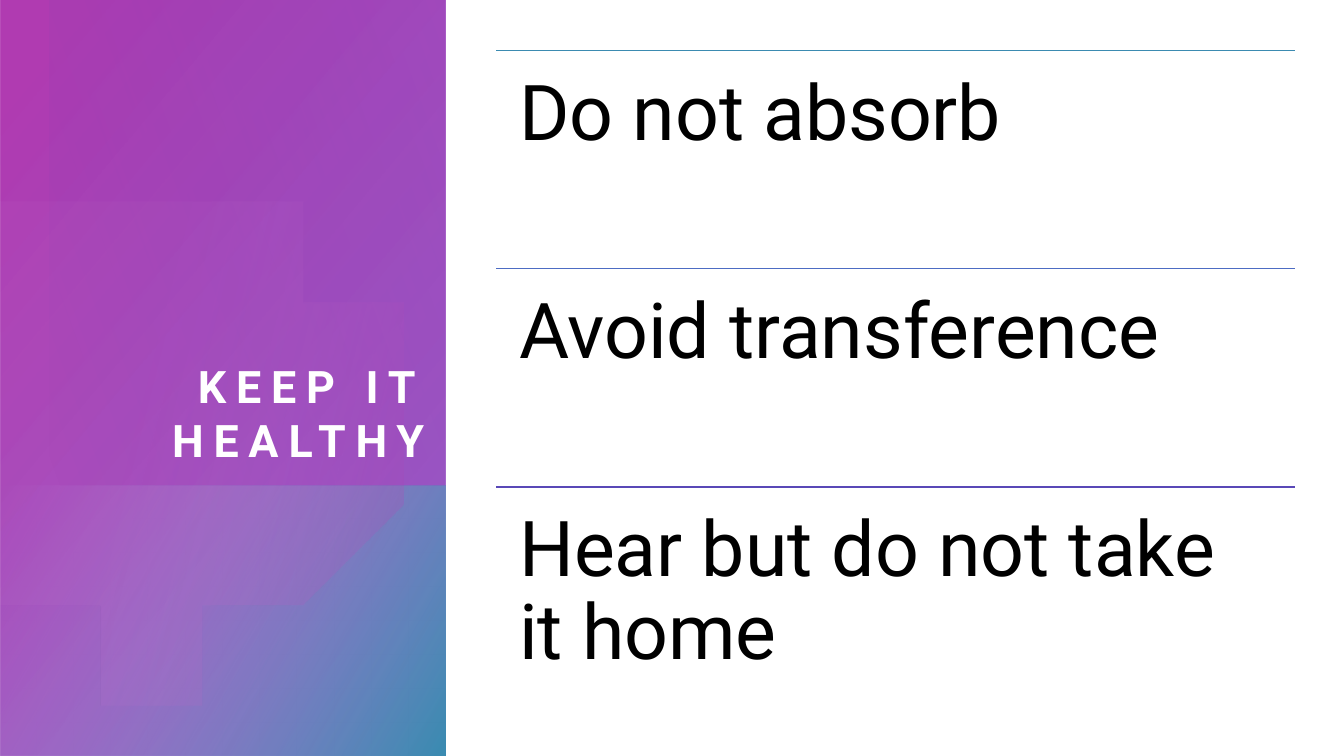
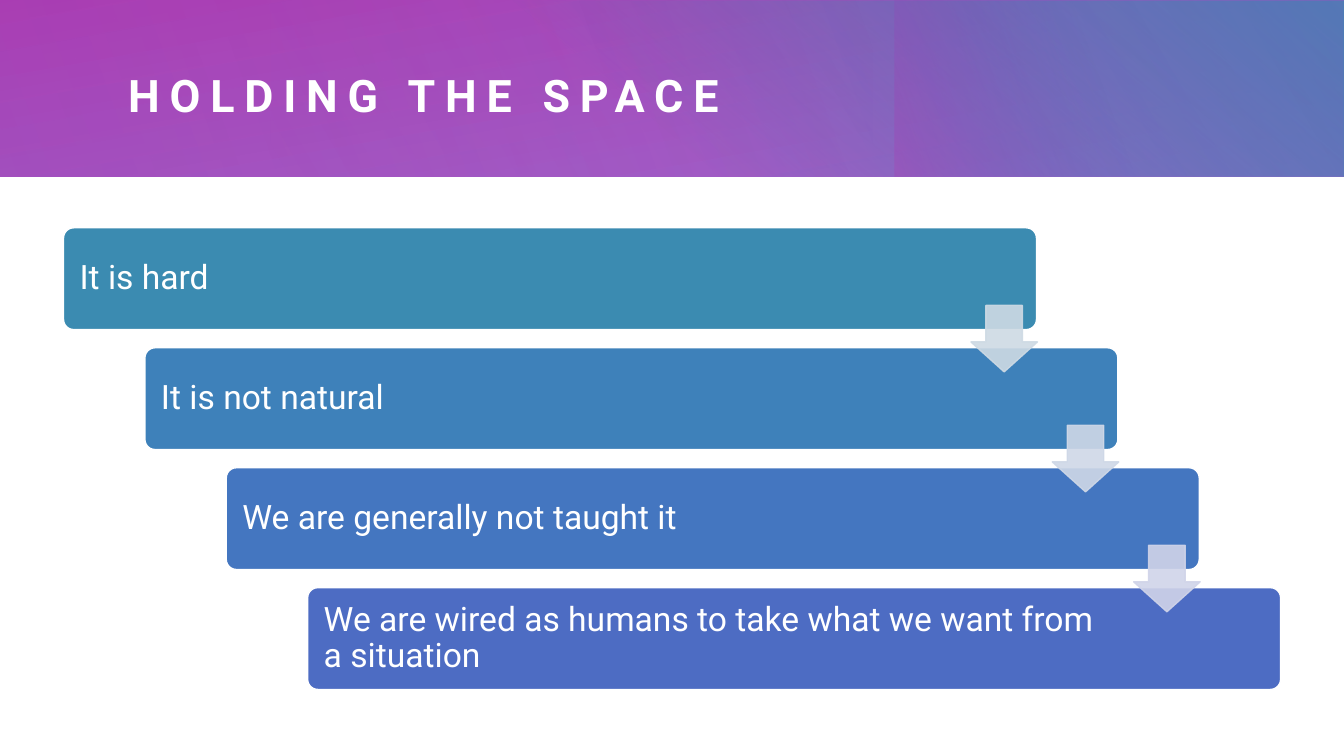
from dataclasses import dataclass

import lxml.etree
import pptx
import pptx.dml.color
import pptx.enum.shapes
import pptx.enum.text
import pptx.oxml
import pptx.oxml.ns
import pptx.presentation
import pptx.shapes.autoshape
import pptx.shapes.base
import pptx.slide
import pptx.text.text
import pptx.util

Inches = pptx.util.Inches
Pt = pptx.util.Pt
RGBColor = pptx.dml.color.RGBColor
Shapes = pptx.enum.shapes.MSO_SHAPE
Align = pptx.enum.text.PP_ALIGN
Anchor = pptx.enum.text.MSO_ANCHOR
qn = pptx.oxml.ns.qn

WHITE = RGBColor(0xFF, 0xFF, 0xFF)
BLACK = RGBColor(0x00, 0x00, 0x00)
MAGENTA = RGBColor(0xB0, 0x3B, 0xB1)
PINK = RGBColor(0xD5, 0x84, 0xD6)
PURPLE = RGBColor(0x90, 0x4D, 0xC3)
LILAC = RGBColor(0xBC, 0x94, 0xDB)
INDIGO = RGBColor(0x59, 0x48, 0xB7)
PERIWINKLE = RGBColor(0x4D, 0x6C, 0xC3)
BLUE = RGBColor(0x44, 0x76, 0xC0)
SKY = RGBColor(0x3E, 0x81, 0xBA)
TEAL = RGBColor(0x3B, 0x8B, 0xB1)
ARROW_TEAL = RGBColor(0xCE, 0xDA, 0xE4)
ARROW_SKY = RGBColor(0xCF, 0xD8, 0xE7)
ARROW_BLUE = RGBColor(0xD0, 0xD4, 0xE9)
FONT = "Roboto"

Point = tuple[float, float]
Box = tuple[float, float, float, float]


@dataclass(frozen=True)
class Stop:
    position: int
    color: RGBColor
    opacity: int = 100


@dataclass(frozen=True)
class Band:
    box: Box
    start: Stop
    end: Stop
    angle: int
    rotation: int = 0
    flipped: bool = False


@dataclass(frozen=True)
class Rule:
    text: str
    color: RGBColor


@dataclass(frozen=True)
class Step:
    text: str
    color: RGBColor
    arrow_color: RGBColor | None = None


SIDE_BANDS = [
    Band((-1.54, 1.54, 7.5, 4.42), Stop(8, MAGENTA), Stop(100, PURPLE, 89), 50, 270, True),
    Band((0.86, 3.95, 2.69, 4.42), Stop(0, LILAC, 0), Stop(99, TEAL), 60, 270, True),
]
SIDE_VEIL = Band((0.05, 0.45, 4.81, 3.92), Stop(0, PURPLE, 29), Stop(100, INDIGO, 0), 110, 90, True)
TOP_BANDS = [
    Band((0, 0, 13.33, 1.75), Stop(0, PURPLE, 83), Stop(100, MAGENTA), 260),
    Band((4.81, 0.01, 8.52, 1.74), Stop(22, TEAL, 0), Stop(99, TEAL), 310),
    Band((9.87, -0.99, 1.75, 3.74), Stop(45, INDIGO, 0), Stop(99, MAGENTA, 33), 250, 270),
    Band((2.68, 0, 10.64, 1.75), Stop(0, PURPLE, 30), Stop(99, PURPLE, 0), 330, 180),
    Band((0, 0, 8.65, 1.75), Stop(0, PURPLE, 21), Stop(99, PURPLE, 0), 340),
]

# Disc cut off by the slide's left edge: each row is two handles and an end point.
DISC_START: Point = (1.64, 1.96)
DISC_CURVES: list[tuple[Point, Point, Point]] = [
    ((2.61, 1.98), (3.5, 2.63), (3.78, 3.62)),
    ((4.13, 4.83), (3.43, 6.1), (2.22, 6.44)),
    ((1.46, 6.66), (0.68, 6.47), (0.12, 6)),
    ((0.08, 5.96), (0.04, 5.93), (0, 5.89)),
    ((0, 4.8), (0, 3.7), (0, 2.61)),
    ((0.05, 2.56), (0.1, 2.52), (0.15, 2.47)),
    ((0.38, 2.29), (0.65, 2.14), (0.95, 2.05)),
    ((1.18, 1.99), (1.41, 1.96), (1.64, 1.96)),
]

RULES = [
    Rule("Do not absorb", TEAL),
    Rule("Avoid transference", PERIWINKLE),
    Rule("Hear but do not take it home", INDIGO),
]
STEPS = [
    Step("It is hard", TEAL, ARROW_TEAL),
    Step("It is not natural", SKY, ARROW_SKY),
    Step("We are generally not taught it", BLUE, ARROW_BLUE),
    Step("We are wired as humans to take what we want from a situation", PERIWINKLE),
]


def inches(box: Box) -> list[pptx.util.Length]:
    return [Inches(length) for length in box]


def set_gradient(shape: pptx.shapes.base.BaseShape, start: Stop, end: Stop, angle: int) -> None:
    """Fill with a linear gradient; the angle runs clockwise from the right."""
    shape.fill.gradient()
    gradient = shape._element.spPr.find(qn("a:gradFill"))
    gradient.set("rotWithShape", "1")
    stops = gradient.find(qn("a:gsLst"))
    for old_stop in list(stops):
        stops.remove(old_stop)
    for stop in (start, end):
        mark = lxml.etree.SubElement(stops, qn("a:gs"), pos=str(stop.position * 1000))
        color = lxml.etree.SubElement(mark, qn("a:srgbClr"), val=str(stop.color))
        lxml.etree.SubElement(color, qn("a:alpha"), val=str(stop.opacity * 1000))
    direction = gradient.find(qn("a:lin"))
    direction.set("ang", str(angle * 60000))
    direction.set("scaled", "0")


def add_band(slide: pptx.slide.Slide, band: Band) -> None:
    shape = slide.shapes.add_shape(Shapes.RECTANGLE, *inches(band.box))
    shape.shadow.inherit = False
    shape.line.fill.background()
    shape.rotation = band.rotation
    if band.flipped:
        shape._element.spPr.get_or_add_xfrm().set("flipH", "1")
    set_gradient(shape, band.start, band.end, band.angle)


def curve_points(begin: Point, handle1: Point, handle2: Point, end: Point) -> list[Point]:
    """Sample a cubic Bézier curve, leaving out its first point."""
    samples = 16
    points = []
    for k in range(1, samples + 1):
        t = k / samples
        weights = ((1 - t) ** 3, 3 * t * (1 - t) ** 2, 3 * t * t * (1 - t), t ** 3)
        corners = (begin, handle1, handle2, end)
        points.append((sum(w * c[0] for w, c in zip(weights, corners)),
                       sum(w * c[1] for w, c in zip(weights, corners))))
    return points


def add_disc(slide: pptx.slide.Slide) -> None:
    outline: list[Point] = [DISC_START]
    for curve in DISC_CURVES:
        outline += curve_points(outline[-1], *curve)
    builder = slide.shapes.build_freeform(*outline[0], scale=float(Inches(1)))
    builder.add_line_segments(outline[1:], close=True)
    disc = builder.convert_to_shape()
    disc.shadow.inherit = False
    disc.line.fill.background()
    set_gradient(disc, Stop(36, PINK, 6), Stop(100, MAGENTA, 26), 14)


def write_text(frame: pptx.text.text.TextFrame, text: str, size: int, color: RGBColor,
               anchor: Anchor, margins: Box, align: Align = Align.LEFT,
               line_spacing: float = 0.9) -> pptx.text.text.Font:
    """Set one paragraph, with margins as left, top, right, bottom."""
    frame.text = text
    frame.word_wrap = True
    frame.auto_size = pptx.enum.text.MSO_AUTO_SIZE.NONE
    frame.vertical_anchor = anchor
    (frame.margin_left, frame.margin_top,
     frame.margin_right, frame.margin_bottom) = inches(margins)
    paragraph = frame.paragraphs[0]
    paragraph.alignment = align
    paragraph.line_spacing = line_spacing
    font = paragraph.runs[0].font
    font.name = FONT
    font.size = Pt(size)
    font.color.rgb = color
    return font


def place_title(slide: pptx.slide.Slide, text: str, box: Box, anchor: Anchor,
                align: Align) -> None:
    """Format the title and lift it above the bands drawn so far."""
    title = slide.shapes.title
    title.left, title.top, title.width, title.height = inches(box)
    font = write_text(title.text_frame, text, 32, WHITE, anchor, (0, 0, 0, 0), align, 1.0)
    font.bold = True
    font._element.set("spc", "700")
    slide.shapes._spTree.append(title._element)


def add_rule(slide: pptx.slide.Slide, rule: Rule, top: float) -> None:
    left, width, height = 4.92, 7.92, 2.16
    divider = slide.shapes.add_connector(
        pptx.enum.shapes.MSO_CONNECTOR.STRAIGHT,
        Inches(left), Inches(top), Inches(left + width), Inches(top))
    divider.line.color.rgb = rule.color
    divider.line.width = Pt(1)
    lxml.etree.SubElement(divider._element.spPr, qn("a:effectLst"))
    label = slide.shapes.add_textbox(*inches((left, top, width, height)))
    write_text(label.text_frame, rule.text, 55, BLACK, Anchor.TOP, (0.23,) * 4)


def add_block(slide: pptx.slide.Slide, preset: Shapes, box: Box, fill: RGBColor,
              line: RGBColor) -> pptx.shapes.autoshape.Shape:
    block = slide.shapes.add_shape(preset, *inches(box))
    block.shadow.inherit = False
    block.fill.solid()
    block.fill.fore_color.rgb = fill
    block.line.color.rgb = line
    block.line.width = Pt(1)
    return block


def add_step(slide: pptx.slide.Slide, step: Step, left: float, top: float) -> None:
    box = add_block(slide, Shapes.ROUNDED_RECTANGLE, (left, top, 9.65, 1.01), step.color, WHITE)
    box.adjustments[0] = 0.1
    write_text(box.text_frame, step.text, 24, WHITE, Anchor.MIDDLE, (0.13, 0.13, 1.59, 0.13))


def add_arrow(slide: pptx.slide.Slide, color: RGBColor, left: float, top: float) -> None:
    arrow = add_block(slide, Shapes.DOWN_ARROW, (left, top, 0.66, 0.66), color, color)
    arrow.adjustments[0] = 0.55
    arrow.adjustments[1] = 0.45
    for paint in arrow._element.spPr.iter(qn("a:srgbClr")):
        lxml.etree.SubElement(paint, qn("a:alpha"), val="90000")


def new_slide(deck: pptx.presentation.Presentation) -> pptx.slide.Slide:
    return deck.slides.add_slide(deck.slide_layouts.get_by_name("Title Only"))


def build_healthy_slide(deck: pptx.presentation.Presentation) -> None:
    slide = new_slide(deck)
    for band in SIDE_BANDS:
        add_band(slide, band)
    add_disc(slide)
    add_band(slide, SIDE_VEIL)
    place_title(slide, "KEEP IT HEALTHY", (0.5, 0.95, 3.71, 3.68), Anchor.BOTTOM, Align.RIGHT)
    for i, rule in enumerate(RULES):
        add_rule(slide, rule, 0.5 + 2.165 * i)


def build_space_slide(deck: pptx.presentation.Presentation) -> None:
    slide = new_slide(deck)
    for band in TOP_BANDS:
        add_band(slide, band)
    place_title(slide, "HOLDING THE SPACE", (1.27, 0.41, 11.35, 1.06), Anchor.MIDDLE, Align.LEFT)
    corners = [(0.63 + 0.807 * i, 2.26 + 1.19 * i) for i in range(len(STEPS))]
    for step, (left, top) in zip(STEPS, corners):
        add_step(slide, step, left, top)
    for step, (left, top) in zip(STEPS, corners):
        if step.arrow_color is not None:
            add_arrow(slide, step.arrow_color, left + 9, top + 0.77)


def main() -> None:
    deck = pptx.Presentation()
    deck.slide_width = Inches(13.33)
    deck.slide_height = Inches(7.5)
    build_healthy_slide(deck)
    build_space_slide(deck)
    deck.save("out.pptx")


if __name__ == "__main__":
    main()
